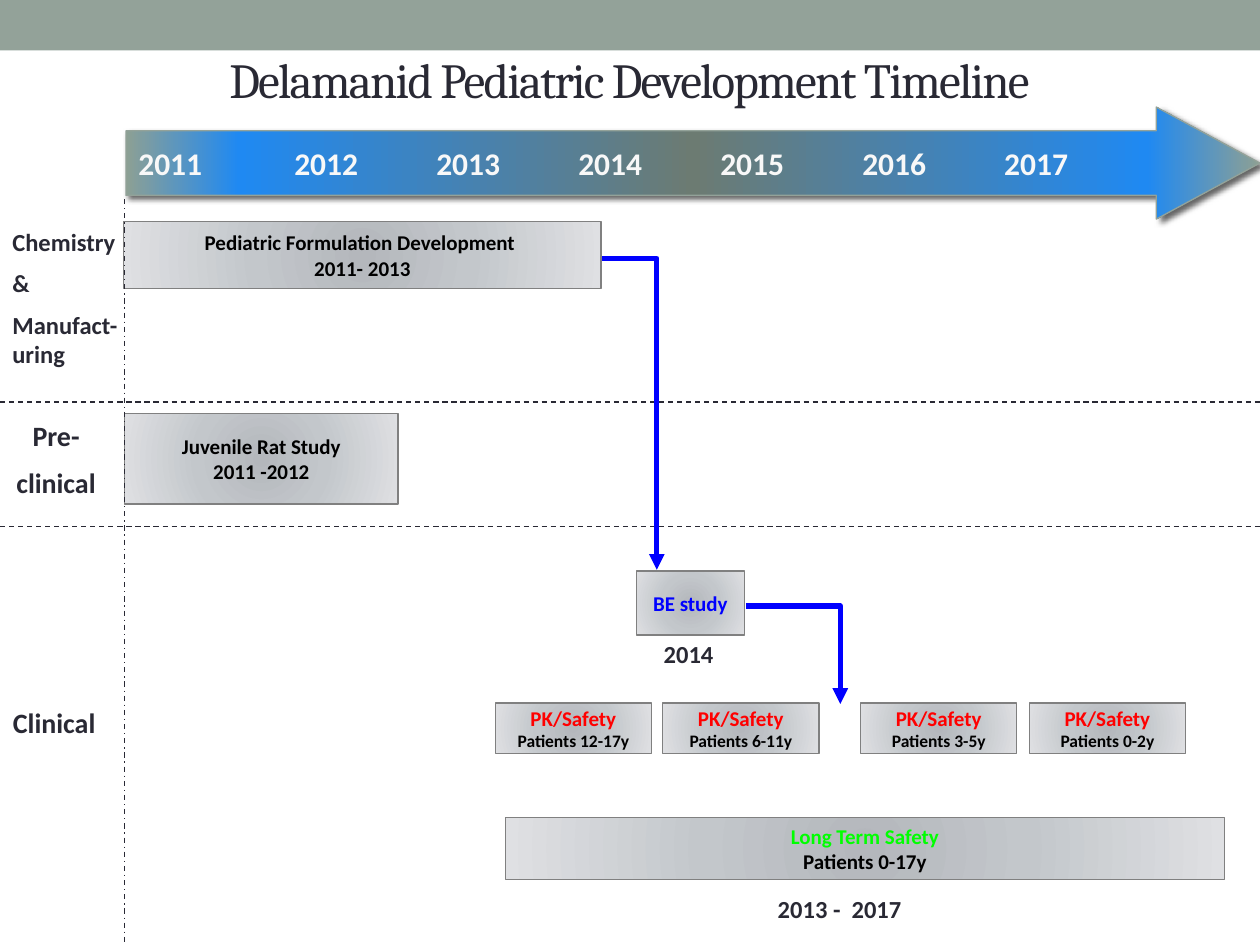
import dataclasses
import typing

import lxml.etree
import pptx
import pptx.dml.color
import pptx.enum.dml
import pptx.enum.shapes
import pptx.enum.text
import pptx.oxml
import pptx.oxml.ns
import pptx.util

Pt = pptx.util.Pt
RGBColor = pptx.dml.color.RGBColor
Preset = pptx.enum.shapes.MSO_SHAPE
Align = pptx.enum.text.PP_ALIGN
Anchor = pptx.enum.text.MSO_ANCHOR
Dash = pptx.enum.dml.MSO_LINE
qn = pptx.oxml.ns.qn

SAGE = RGBColor(0x93, 0xA2, 0x99)
INK = RGBColor(0x29, 0x29, 0x34)
GRAY = RGBColor(0x80, 0x80, 0x80)
BLACK = RGBColor(0x00, 0x00, 0x00)
OFF_WHITE = RGBColor(0xF8, 0xF8, 0xF8)
BLUE = RGBColor(0x00, 0x00, 0xFF)
RED = RGBColor(0xFF, 0x00, 0x00)
GREEN = RGBColor(0x00, 0xFF, 0x00)
SAGE_EDGE = RGBColor(0x8D, 0xA0, 0x94)
SKY = RGBColor(0x1F, 0x89, 0xF2)
MOSS = RGBColor(0x6C, 0x7B, 0x72)
STEEL = RGBColor(0xB4, 0xB7, 0xBC)
SILVER = RGBColor(0xC3, 0xC7, 0xCB)
PALE = RGBColor(0xDF, 0xE0, 0xE3)

Area = tuple[float, float, float, float]
Point = tuple[float, float]

ARROW_STOPS = [(0, SAGE_EDGE), (10, SKY), (50, MOSS), (90, SKY), (100, SAGE_EDGE)]
ARROW_SHADE = '<a:lin ang="0" scaled="0"/>'
BOX_STOPS = [(0, STEEL), (45, SILVER), (100, PALE)]
BOX_SHADE = (
    '<a:path path="circle">'
    '<a:fillToRect l="100000" t="100000" r="100000" b="100000"/></a:path>'
)


@dataclasses.dataclass
class Line:
    text: str
    size: float = 12
    color: RGBColor = BLACK
    font: str = "Calibri"
    bold: bool = True


@dataclasses.dataclass
class Block:
    area: Area
    lines: list[Line]
    align: Align = Align.CENTER


STUDIES = [
    Block((70.6, 126.7, 272.9, 38.2),
          [Line("Pediatric Formulation Development "), Line("2011- 2013")]),
    Block((71.3, 236.2, 156.2, 51.8),
          [Line("Juvenile Rat Study"), Line("2011 -2012")]),
    Block((363.6, 326.2, 61.9, 36.7), [Line("BE study", color=BLUE)]),
    Block((288.7, 467.3, 411.1, 35.3),
          [Line("Long Term Safety", color=GREEN), Line("Patients 0-17y")]),
]
COHORTS = [(283, "12-17y"), (378.7, "6-11y"), (491.8, "3-5y"), (588.2, "0-2y")]
STUDIES += [
    Block((left, 401.8, 89.3, 28.8),
          [Line("PK/Safety", color=RED), Line(f"Patients {ages}", size=10)])
    for left, ages in COHORTS
]

LABELS = [
    Block((0, 126, 81.4, 92.2),
          [Line(word, 14, INK) for word in ("Chemistry", "&", "Manufact-uring")],
          Align.LEFT),
    Block((0, 235.4, 64.1, 55.4),
          [Line(word, 16, INK) for word in ("Pre-", "clinical")]),
    Block((-5, 399.6, 72, 26.6), [Line("Clinical", 16, INK)]),
    Block((365.8, 361.4, 55.4, 23.8), [Line("2014", 14, INK)]),
    Block((434.2, 507.6, 131.8, 23.8), [Line(" 2013 -  2017", 14, INK)], Align.LEFT),
]

RULES = [
    ((0, 229.7), (720, 229.7), Dash.DASH),
    ((0, 301), (720, 301), Dash.DASH),
    ((71.3, 113.8), (71.3, 540), Dash.DASH_DOT),
]
ELBOWS = [((344.2, 147.6), (375.3, 325.6)), ((426.2, 346.3), (480.2, 402.3))]


def apply_format(target: typing.Any, values: dict[str, typing.Any]) -> None:
    for name, value in values.items():
        setattr(target, name, value)


def write_lines(frame, lines: list[Line], align: Align, gap: float = 0) -> None:
    frame.word_wrap = True
    for index, line in enumerate(lines):
        paragraph = frame.add_paragraph() if index else frame.paragraphs[0]
        paragraph.alignment = align
        if index and gap:
            paragraph.space_before = Pt(gap * line.size)
        run = paragraph.add_run()
        run.text = line.text
        apply_format(run.font, {"name": line.font, "size": Pt(line.size), "bold": line.bold})
        run.font.color.rgb = line.color


def set_line(line, color: RGBColor, width: float) -> None:
    line.color.rgb = color
    line.width = Pt(width)


def set_gradient(shape, stops: list[tuple[int, RGBColor]], shade: str) -> None:
    marks = "".join(
        f'<a:gs pos="{place * 1000}"><a:srgbClr val="{color}"/></a:gs>'
        for place, color in stops
    )
    gradient = pptx.oxml.parse_xml(
        f'<a:gradFill {pptx.oxml.ns.nsdecls("a")} rotWithShape="1">'
        f"<a:gsLst>{marks}</a:gsLst>{shade}</a:gradFill>"
    )
    shape.fill.background()
    properties = shape.element.spPr
    properties.replace(properties.find(qn("a:noFill")), gradient)


def add_preset(slide, preset: Preset, area: Area):
    shape = slide.shapes.add_shape(preset, *map(Pt, area))
    shape.shadow.inherit = False
    shape.text_frame.vertical_anchor = Anchor.MIDDLE
    return shape


def add_band(slide) -> None:
    band = add_preset(slide, Preset.RECTANGLE, (0, 0, 720, 28.8))
    band.fill.solid()
    band.fill.fore_color.rgb = SAGE
    band.line.fill.background()


def add_year_arrow(slide) -> None:
    arrow = add_preset(slide, Preset.RIGHT_ARROW, (72, 61.2, 648, 64))
    arrow.adjustments[0], arrow.adjustments[1] = 0.577, 0.925
    set_gradient(arrow, ARROW_STOPS, ARROW_SHADE)
    set_line(arrow.line, SAGE, 0.75)
    arrow.element.spPr.find(qn("a:effectLst")).append(pptx.oxml.parse_xml(
        f'<a:outerShdw {pptx.oxml.ns.nsdecls("a")} blurRad="{Pt(3)}" dist="{Pt(2)}" '
        'dir="2700000" rotWithShape="0">'
        '<a:srgbClr val="000000"><a:alpha val="60000"/></a:srgbClr></a:outerShdw>'
    ))
    years = "\t".join(str(year) for year in range(2011, 2018))
    write_lines(arrow.text_frame, [Line(years, 18, OFF_WHITE)], Align.LEFT)
    paragraph_format = arrow.text_frame.paragraphs[0]._p.get_or_add_pPr()
    tabs = lxml.etree.SubElement(paragraph_format, qn("a:tabLst"))
    for step in range(6):
        stop = Pt(89.1 + 81.14 * step)
        lxml.etree.SubElement(tabs, qn("a:tab"), pos=str(stop), algn="l")


def add_title(slide) -> None:
    title = slide.shapes.add_textbox(*map(Pt, (2.2, 14.4, 715, 61.2))).text_frame
    title.vertical_anchor = Anchor.MIDDLE
    heading = Line("Delamanid Pediatric Development Timeline", 28, INK, "Cambria", False)
    write_lines(title, [heading], Align.CENTER)
    title.paragraphs[0].runs[0].font._element.set("spc", "-100")


def add_study(slide, study: Block) -> None:
    box = add_preset(slide, Preset.RECTANGLE, study.area)
    set_gradient(box, BOX_STOPS, BOX_SHADE)
    set_line(box.line, GRAY, 0.75)
    write_lines(box.text_frame, study.lines, study.align)


def add_label(slide, label: Block) -> None:
    frame = slide.shapes.add_textbox(*map(Pt, label.area)).text_frame
    write_lines(frame, label.lines, label.align, gap=0.5)
    frame.auto_size = pptx.enum.text.MSO_AUTO_SIZE.SHAPE_TO_FIT_TEXT


def add_rule(slide, start: Point, end: Point, dash: Dash) -> None:
    rule = slide.shapes.add_connector(
        pptx.enum.shapes.MSO_CONNECTOR.STRAIGHT, *map(Pt, start + end))
    set_line(rule.line, INK, 0.75)
    rule.line.dash_style = dash
    lxml.etree.SubElement(rule.element.spPr, qn("a:effectLst"))


def add_elbow(slide, start: Point, end: Point) -> None:
    builder = slide.shapes.build_freeform(*map(Pt, start))
    corner = (Pt(end[0]), Pt(start[1]))
    builder.add_line_segments([corner, tuple(map(Pt, end))], close=False)
    elbow = builder.convert_to_shape()
    elbow.shadow.inherit = False
    elbow.fill.background()
    set_line(elbow.line, BLUE, 3)
    lxml.etree.SubElement(elbow.element.spPr.find(qn("a:ln")), qn("a:tailEnd"), type="triangle")


def main() -> None:
    deck = pptx.Presentation()
    apply_format(deck, {"slide_width": Pt(720), "slide_height": Pt(540)})
    slide = deck.slides.add_slide(deck.slide_layouts[6])
    add_band(slide)
    add_year_arrow(slide)
    add_title(slide)
    for study in STUDIES:
        add_study(slide, study)
    for label in LABELS:
        add_label(slide, label)
    for start, end, dash in RULES:
        add_rule(slide, start, end, dash)
    for start, end in ELBOWS:
        add_elbow(slide, start, end)
    deck.save("out.pptx")


if __name__ == "__main__":
    main()
